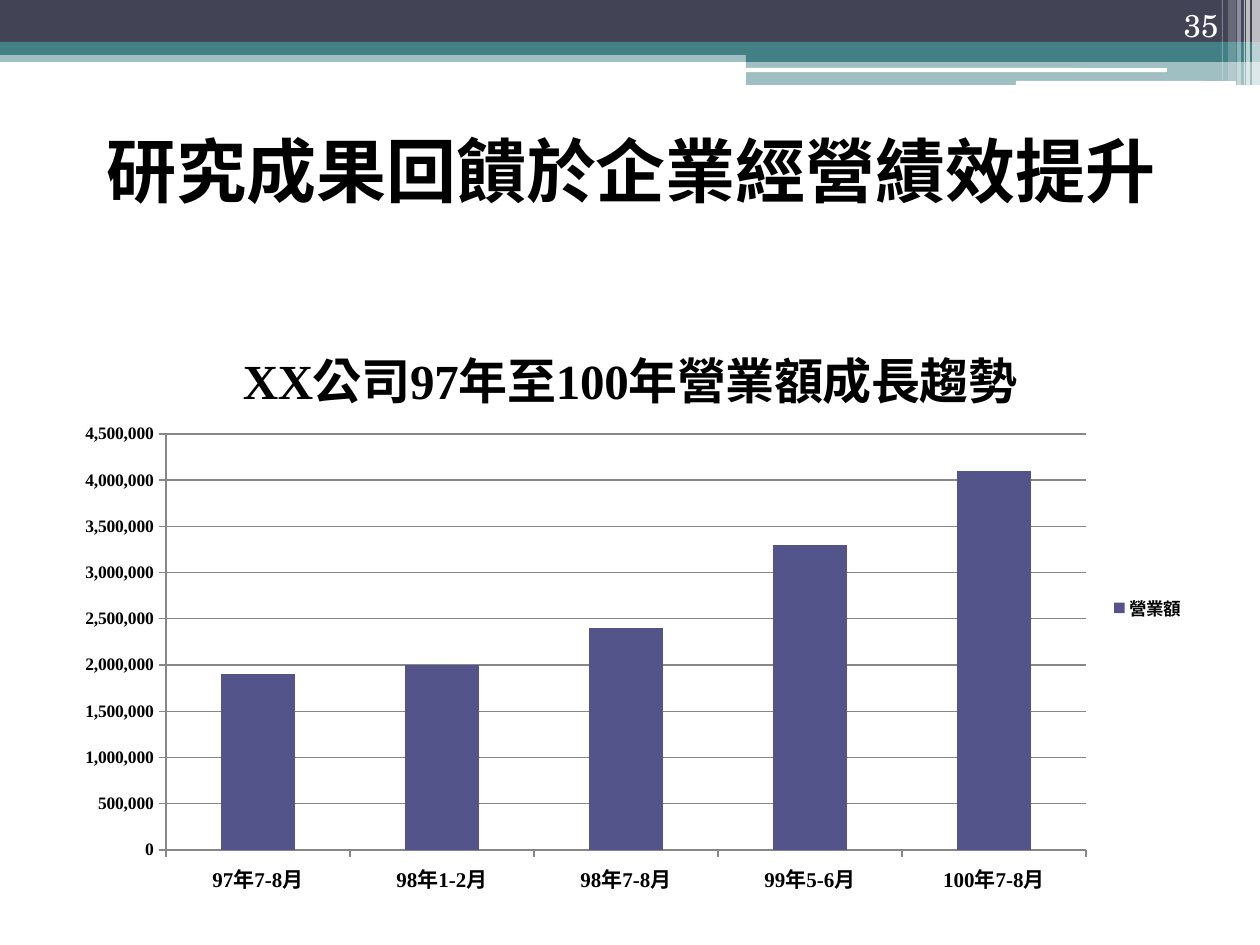
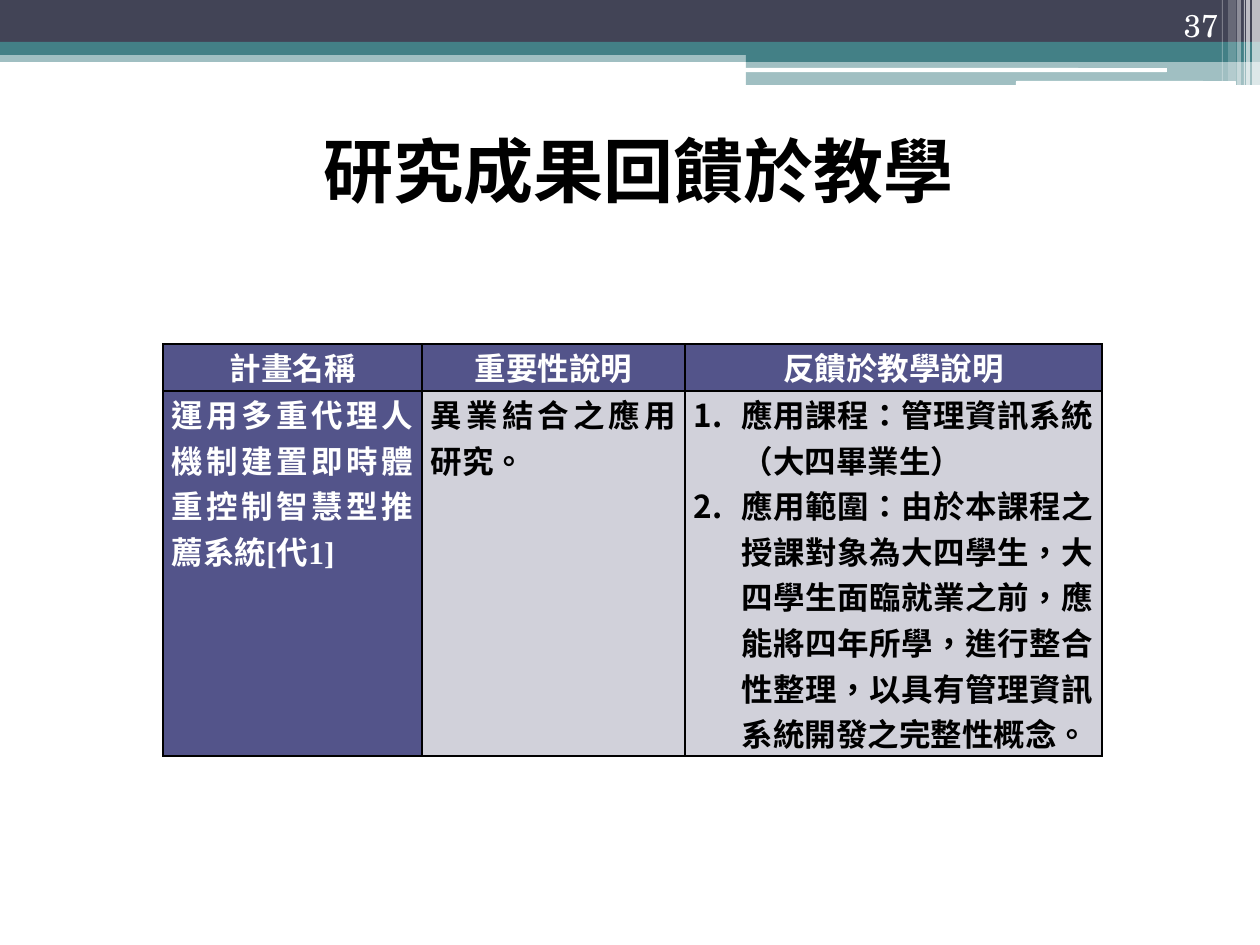
"""Build two slides on how research results feed back into business and teaching."""
from lxml.etree import Element, SubElement
from pptx import Presentation
from pptx.chart.data import CategoryChartData
from pptx.dml.color import RGBColor
from pptx.enum.chart import XL_CHART_TYPE as ChartType, XL_LEGEND_POSITION as LegendPosition
from pptx.enum.chart import XL_TICK_MARK as TickMark
from pptx.enum.shapes import MSO_SHAPE as Shape
from pptx.enum.text import MSO_ANCHOR as Anchor, PP_ALIGN as Align
from pptx.oxml.ns import qn
from pptx.util import Emu, Pt

PX = 914400 / 126
SLATE = RGBColor(0x42, 0x44, 0x56)
TEAL = RGBColor(0x43, 0x80, 0x86)
INDIGO = RGBColor(0x53, 0x54, 0x8A)
PALE = RGBColor(0xD1, 0xD1, 0xDA)
GRAY = RGBColor(0x87, 0x87, 0x87)
WHITE = RGBColor(0xFF, 0xFF, 0xFF)
BLACK = RGBColor(0, 0, 0)
SANS = "Noto Sans CJK TC"
SERIF = "Times New Roman"
NUMBER_FONT = "TeX Gyre Schola"

BANDS = [
    (Shape.RECTANGLE, 0, 50, 1260, 12, TEAL, 50),
    (Shape.RECTANGLE, 0, 0, 1260, 42, SLATE, 100),
    (Shape.RECTANGLE, 0, 42, 1260, 13, TEAL, 100),
    (Shape.RECTANGLE, 746, 49, 514, 13, TEAL, 100),
    (Shape.RECTANGLE, 746, 62, 514, 23, TEAL, 50),
    (Shape.ROUNDED_RECTANGLE, 745, 68, 422, 4, WHITE, 100),
    (Shape.ROUNDED_RECTANGLE, 1016, 81, 220, 5, WHITE, 100),
    (Shape.RECTANGLE, 1252, 0, 8, 85, WHITE, 65),
    (Shape.RECTANGLE, 1246, 0, 4, 85, WHITE, 65),
    (Shape.RECTANGLE, 1244, 0, 1, 85, WHITE, 60),
    (Shape.RECTANGLE, 1237, 0, 4, 85, WHITE, 40),
    (Shape.RECTANGLE, 1228, 0, 8, 81, WHITE, 20),
    (Shape.RECTANGLE, 1222, 0, 1, 81, WHITE, 30),
]
PAGES = [("研究成果回饋於企業經營績效提升", "35"), ("研究成果回饋於教學", "37")]


def box(*lengths):
    return [Emu(round(length * PX)) for length in lengths]


def style_font(font, size, name, color=BLACK, bold=True):
    font.size, font.name, font.bold = Pt(size), name, bold
    font.color.rgb = color
    font._element.set("lang", "zh-TW")
    east_asian = SANS if name == SERIF else name
    SubElement(font._element, qn("a:ea")).set("typeface", east_asian)


presentation = Presentation()
presentation.slide_width, presentation.slide_height = box(1260, 945)
slides = []
for title, number in PAGES:
    slide = presentation.slides.add_slide(presentation.slide_layouts[6])
    slides.append(slide)
    for kind, left, top, width, height, color, opacity in BANDS:
        shape = slide.shapes.add_shape(kind, *box(left, top, width, height))
        shape.shadow.inherit = False
        shape.fill.solid()
        shape.fill.fore_color.rgb = color
        shape.line.fill.background()
        if opacity < 100:
            fill_color = shape._element.spPr.find(".//" + qn("a:srgbClr"))
            SubElement(fill_color, qn("a:alpha")).set("val", str(opacity * 1000))

    for text, bounds, anchor, align, size, name, color, bold in (
        (title, (64, 96, 1134, 147), Anchor.MIDDLE, Align.CENTER, 40, SANS, BLACK, True),
        (number, (1126, 0, 105, 50), Anchor.BOTTOM, Align.RIGHT, 18, NUMBER_FONT, WHITE, False),
    ):
        text_frame = slide.shapes.add_textbox(*box(*bounds)).text_frame
        text_frame.word_wrap = True
        text_frame.vertical_anchor = anchor
        text_frame.text = text
        paragraph = text_frame.paragraphs[0]
        paragraph.alignment = align
        style_font(paragraph.runs[0].font, size, name, color, bold)

chart_slide, table_slide = slides
title_shape = table_slide.shapes[len(BANDS)]
title_properties = title_shape.text_frame.paragraphs[0]._p.get_or_add_pPr()
margin, indent = box(86, -71)
title_properties.set("marL", str(margin))
title_properties.set("indent", str(indent))

chart_data = CategoryChartData(number_format="#,##0")
chart_data.categories = ["97年7-8月", "98年1-2月", "98年7-8月", "99年5-6月", "100年7-8月"]
chart_data.add_series("營業額", [1900000, 2000000, 2400000, 3300000, 4100000])
chart = chart_slide.shapes.add_chart(
    ChartType.COLUMN_CLUSTERED, *box(63, 310, 1134, 596), chart_data
).chart
style_font(chart.font, 10, NUMBER_FONT, bold=False)
chart.has_title = True
chart.chart_title.include_in_layout = False
chart.chart_title.text_frame.text = "XX公司97年至100年營業額成長趨勢"
style_font(chart.chart_title.text_frame.paragraphs[0].runs[0].font, 28, SERIF)
chart.has_legend = True
chart.legend.position = LegendPosition.RIGHT
chart.legend.include_in_layout = False
style_font(chart.legend.font, 10, SANS)

plot_area = chart._chartSpace.find(".//" + qn("c:plotArea"))
plot_layout = plot_area.find(qn("c:layout"))
if plot_layout is None:
    plot_layout = Element(qn("c:layout"))
    plot_area.insert(0, plot_layout)
manual_layout = SubElement(plot_layout, qn("c:manualLayout"))
for tag, value in (
    ("layoutTarget", "inner"),
    ("xMode", "edge"),
    ("yMode", "edge"),
    ("x", 103 / 1134),
    ("y", 124 / 596),
    ("w", 920 / 1134),
    ("h", 416 / 596),
):
    SubElement(manual_layout, qn("c:" + tag)).set("val", str(value))

plot = chart.plots[0]
plot.gap_width = 150
plot.vary_by_categories = False
plot.series[0].format.fill.solid()
plot.series[0].format.fill.fore_color.rgb = INDIGO
for axis, size in ((chart.category_axis, 12), (chart.value_axis, 10)):
    axis.major_tick_mark = TickMark.OUTSIDE
    axis.minor_tick_mark = TickMark.NONE
    axis.format.line.color.rgb = GRAY
    style_font(axis.tick_labels.font, size, SERIF)
value_axis = chart.value_axis
value_axis.minimum_scale, value_axis.maximum_scale = 0, 4500000
value_axis.major_unit = 500000
value_axis.has_major_gridlines = True
value_axis.major_gridlines.format.line.color.rgb = GRAY
value_axis.tick_labels.number_format = "#,##0"
value_axis.tick_labels.number_format_is_linked = False

ROWS = [
    ["計畫名稱", "重要性說明", "反饋於教學說明"],
    [
        "運用多重代理人機制建置即時體重控制智慧型推薦系統[代1]",
        "異業結合之應用研究。",
        "應用課程：管理資訊系統（大四畢業生）\n"
        "應用範圍：由於本課程之授課對象為大四學生，大四學生面臨就業之前，"
        "應能將四年所學，進行整合性整理，以具有管理資訊系統開發之完整性概念。",
    ],
]
table = table_slide.shapes.add_table(2, 3, *box(163, 344, 939, 412)).table
for column, width in zip(table.columns, box(259, 263, 417)):
    column.width = width
for row, height in zip(table.rows, box(47, 365)):
    row.height = height

hanging = box(48)[0]
for row_index, texts in enumerate(ROWS):
    for column_index, text in enumerate(texts):
        is_heading = row_index == 0 or column_index == 0
        cell = table.cell(row_index, column_index)
        cell.margin_left = cell.margin_right = box(9)[0]
        cell.margin_top = cell.margin_bottom = 0
        for side in ("a:lnL", "a:lnR", "a:lnT", "a:lnB"):
            border = SubElement(cell._tc.get_or_add_tcPr(), qn(side), w=str(Pt(1)))
            border_fill = SubElement(border, qn("a:solidFill"))
            SubElement(border_fill, qn("a:srgbClr")).set("val", str(BLACK))
        cell.fill.solid()
        cell.fill.fore_color.rgb = INDIGO if is_heading else PALE
        cell.text_frame.text = text
        for paragraph in cell.text_frame.paragraphs:
            paragraph.alignment = Align.CENTER if row_index == 0 else Align.JUSTIFY
            style_font(paragraph.runs[0].font, 18, SERIF, WHITE if is_heading else BLACK)
            if len(cell.text_frame.paragraphs) > 1:
                properties = paragraph._p.get_or_add_pPr()
                properties.set("marL", str(hanging))
                properties.set("indent", str(-hanging))
                SubElement(properties, qn("a:buFont")).set("typeface", SANS)
                SubElement(properties, qn("a:buAutoNum")).set("type", "arabicPeriod")

presentation.save("out.pptx")
